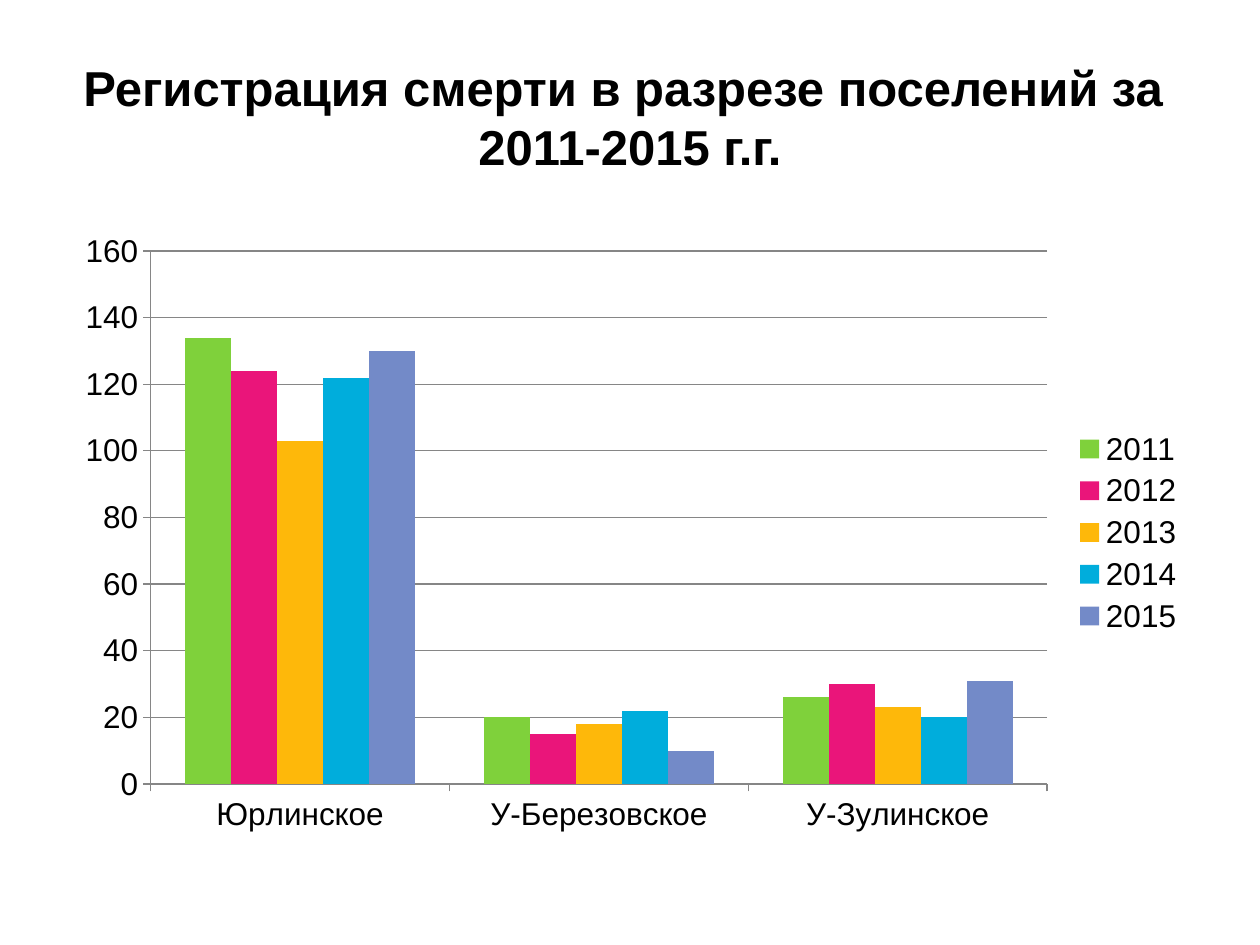
from pptx import Presentation
from pptx import util as u
from pptx.chart import data
from pptx.dml import color
from pptx.enum import chart as charts, text

COLORS = {
    "text": "000000",
    "line": "868686",
    "2011": "7FD13B",
    "2012": "EA157A",
    "2013": "FEB80A",
    "2014": "00ADDC",
    "2015": "738AC8",
}
SETTLEMENTS = ["Юрлинское", "У-Березовское", "У-Зулинское"]
DEATHS = {
    "2011": [134, 20, 26],
    "2012": [124, 15, 30],
    "2013": [103, 18, 23],
    "2014": [122, 22, 20],
    "2015": [130, 10, 31],
}


def apply(target, values):
    """Set each named attribute of the target."""
    for name, value in values.items():
        setattr(target, name, value)


class SlideBuilder:
    """Hold the style and the current slide, and add elements to it."""

    def __init__(self, slide, font_name="Arial"):
        self.slide = slide
        self.font_name = font_name

    def format_font(self, font, size, bold=False):
        """Apply the common font style."""
        apply(font, {"name": self.font_name, "size": u.Pt(size), "bold": bold})
        font.color.rgb = color.RGBColor.from_string(COLORS["text"])

    def format_line(self, line):
        """Apply the common axis and gridline style."""
        line.color.rgb = color.RGBColor.from_string(COLORS["line"])
        line.width = u.Pt(0.75)

    def title(self, wording, box, size):
        """Fill and place the title placeholder."""
        shape = self.slide.shapes.title
        apply(shape, dict(zip(("left", "top", "width", "height"), map(u.Cm, box))))
        frame = shape.text_frame
        frame.text = wording
        apply(frame, {
            "word_wrap": True,
            "auto_size": text.MSO_AUTO_SIZE.NONE,
            "vertical_anchor": text.MSO_ANCHOR.MIDDLE,
        })
        paragraph = frame.paragraphs[0]
        paragraph.alignment = text.PP_ALIGN.CENTER
        for run in paragraph.runs:
            self.format_font(run.font, size, bold=True)

    def column_chart(self, categories, series_values, box, size):
        """Add a clustered column chart with a legend on the right."""
        chart_data = data.CategoryChartData()
        chart_data.categories = categories
        for name, values in series_values.items():
            chart_data.add_series(name, values)
        chart = self.slide.shapes.add_chart(
            charts.XL_CHART_TYPE.COLUMN_CLUSTERED, *map(u.Cm, box), chart_data
        ).chart
        self.format_font(chart.font, size)
        apply(chart, {"has_title": False, "has_legend": True})
        apply(chart.legend, {
            "position": charts.XL_LEGEND_POSITION.RIGHT,
            "include_in_layout": False,
        })
        plot = chart.plots[0]
        apply(plot, {"gap_width": 150, "overlap": 0, "vary_by_categories": False})
        for series in plot.series:
            series.format.fill.solid()
            series.format.fill.fore_color.rgb = color.RGBColor.from_string(
                COLORS[series.name]
            )
        for axis in (chart.category_axis, chart.value_axis):
            axis.major_tick_mark = charts.XL_TICK_MARK.OUTSIDE
            self.format_line(axis.format.line)
        apply(chart.value_axis, {
            "minimum_scale": 0,
            "maximum_scale": 160,
            "major_unit": 20,
            "has_major_gridlines": True,
        })
        self.format_line(chart.value_axis.major_gridlines.format.line)


def main():
    """Build and save the presentation."""
    presentation = Presentation()
    apply(presentation, {"slide_width": u.Cm(25.4), "slide_height": u.Cm(19.05)})
    slide = presentation.slides.add_slide(
        presentation.slide_layouts.get_by_name("Title Only")
    )
    builder = SlideBuilder(slide)
    builder.title(
        "Регистрация смерти в разрезе поселений за \v2011-2015 г.г.",
        (1.27, 0.76, 22.86, 3.18),
        28,
    )
    builder.column_chart(SETTLEMENTS, DEATHS, (1.27, 4.45, 22.86, 12.57), 18)
    presentation.save("out.pptx")


if __name__ == "__main__":
    main()
